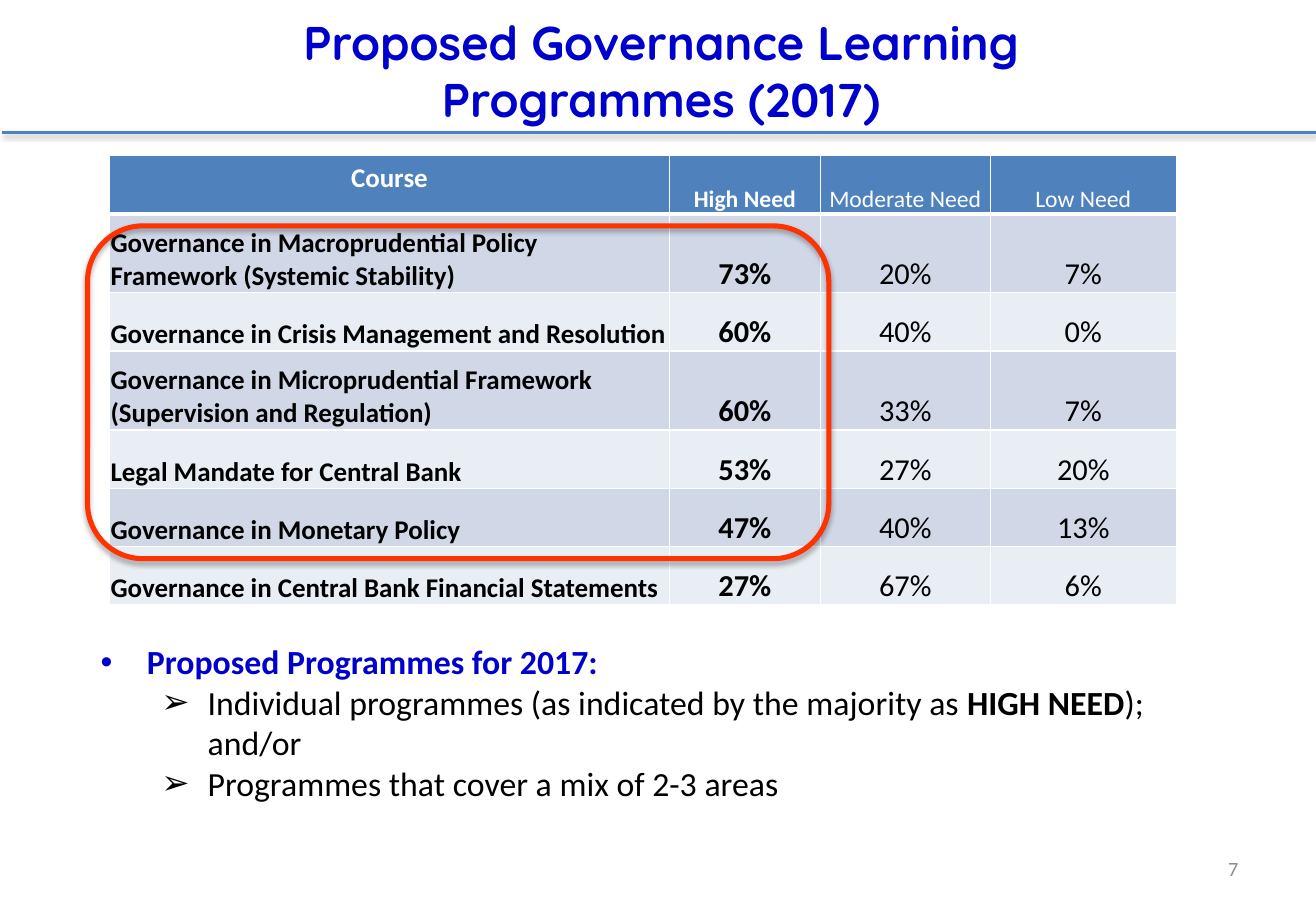
from lxml import etree
from pptx import Presentation, util as u
from pptx.dml.color import RGBColor
from pptx.enum import shapes, text
from pptx.oxml import ns

WIDTH, HEIGHT = u.Inches(10.83), u.Inches(7.5)
BLUE, STEEL, WHITE, BLACK = "0000CC", "4F81BD", "FFFFFF", "000000"
GREY, RED, BANDS = "8C8C8C", "FF3300", ("D0D8E8", "E9EDF4")
CENTER = text.PP_ALIGN.CENTER

COLUMNS = (42.57, 11.45, 12.93, 14.13)
SHORT_ROW, TALL_ROW = 6.4, 8.67
HEADINGS = ("Course", "High Need", "Moderate Need", "Low Need")
COURSES = (
    ("Governance in Macroprudential Policy Framework (Systemic Stability)", "73%", "20%", "7%"),
    ("Governance in Crisis Management and Resolution", "60%", "40%", "0%"),
    ("Governance in Microprudential Framework\n(Supervision and Regulation)", "60%", "33%", "7%"),
    ("Legal Mandate for Central Bank", "53%", "27%", "20%"),
    ("Governance in Monetary Policy", "47%", "40%", "13%"),
    ("Governance in Central Bank Financial Statements", "27%", "67%", "6%"),
)
TALL_COURSES = (0, 2)
BULLETS = (
    ("•", 0.38, BLUE, (("Proposed Programmes for 2017:", True),)),
    ("➢", 0.88, BLACK, (
        ("Individual programmes (as indicated by the majority as ", False),
        ("HIGH NEED", True),
        ("); and/or", False))),
    ("➢", 0.88, BLACK, (("Programmes that cover a mix of 2-3 areas", False),)),
)


def across(percent):
    """Turn a percentage of the slide width into a length."""
    return round(WIDTH * percent / 100)


def down(percent):
    """Turn a percentage of the slide height into a length."""
    return round(HEIGHT * percent / 100)


def place(left, top, width, height):
    """Turn four percentages into a box on the slide."""
    return across(left), down(top), across(width), down(height)


def color(value):
    """Make a colour from a hex string."""
    return RGBColor.from_string(value)


def add_element(parent, tag, **attributes):
    """Append a drawing element with its attributes."""
    names = {key: str(value) for key, value in attributes.items()}
    return etree.SubElement(parent, ns.qn(tag), names)


def add_span(para, words, size=18, bold=False, fill=BLACK, font="Calibri"):
    """Append formatted words to a paragraph."""
    span = para.add_run()
    span.text = words
    span.font.name, span.font.size, span.font.bold = font, u.Pt(size), bold
    span.font.color.rgb = color(fill)


def write(frame, words, align=None, **style):
    """Fill a text frame with one paragraph for each line of words."""
    for index, line in enumerate(words.split("\n")):
        para = frame.add_paragraph() if index else frame.paragraphs[0]
        para.alignment = align
        add_span(para, line, **style)


def outline(shape, fill, width, opacity, distance):
    """Give a shape a coloured line and a soft shadow below it."""
    shape.line.color.rgb = color(fill)
    shape.line.width = u.Pt(width)
    effects = add_element(shape._element.spPr, "a:effectLst")
    shadow = add_element(effects, "a:outerShdw", blurRad=u.Pt(3.1), dist=u.Pt(distance),
                         dir=5400000, rotWithShape=0)
    shade = add_element(shadow, "a:srgbClr", val=BLACK)
    add_element(shade, "a:alpha", val=opacity * 1000)


def add_heading(page, box):
    """Set the title and the rule below it."""
    title = page.shapes.title
    title.left, title.top, title.width, title.height = box
    frame = title.text_frame
    frame.word_wrap, frame.auto_size = True, text.MSO_AUTO_SIZE.NONE
    frame.vertical_anchor = text.MSO_ANCHOR.MIDDLE
    write(frame, "Proposed Governance Learning Programmes (2017)", CENTER,
          size=28, bold=True, fill=BLUE, font="Quicksand")
    level = down(14.53)
    rule = page.shapes.add_connector(shapes.MSO_CONNECTOR.STRAIGHT, across(0.18), level, WIDTH, level)
    outline(rule, STEEL, 2, 38, 1.6)


def format_cell(cell, fill, top=1, bottom=1):
    """Set the borders and fill of a table cell."""
    properties = cell._tc.get_or_add_tcPr()
    for tag, width in (("a:lnL", 1), ("a:lnR", 1), ("a:lnT", top), ("a:lnB", bottom)):
        border = add_element(properties, tag, w=u.Pt(width))
        add_element(add_element(border, "a:solidFill"), "a:srgbClr", val=WHITE)
    cell.fill.solid()
    cell.fill.fore_color.rgb = color(fill)


def tighten(cell):
    """Anchor cell text at the bottom with narrow margins."""
    cell.vertical_anchor = text.MSO_ANCHOR.BOTTOM
    cell.margin_left = cell.margin_right = cell.margin_top = u.Inches(0.01)
    cell.margin_bottom = 0


def add_needs(page, box):
    """Build the table of courses and needs."""
    table = page.shapes.add_table(len(COURSES) + 1, len(COLUMNS), *box).table
    for column, share in zip(table.columns, COLUMNS):
        column.width = across(share)
    for row in table.rows:
        row.height = down(SHORT_ROW)
    for index in TALL_COURSES:
        table.rows[index + 1].height = down(TALL_ROW)
    for index, words in enumerate(HEADINGS):
        cell = table.cell(0, index)
        format_cell(cell, STEEL, bottom=3)
        if index:
            tighten(cell)
        write(cell.text_frame, words, CENTER, size=14 if index else 16, bold=index < 2, fill=WHITE)
    for line, course in enumerate(COURSES):
        for index, words in enumerate(course):
            cell = table.cell(line + 1, index)
            format_cell(cell, BANDS[line % 2], top=1 if line else 3)
            tighten(cell)
            write(cell.text_frame, words, CENTER if index else text.PP_ALIGN.LEFT,
                  size=18 if index else 16, bold=index < 2)


def add_highlight(page, box):
    """Frame the courses in highest need."""
    frame = page.shapes.add_shape(shapes.MSO_SHAPE.ROUNDED_RECTANGLE, *box)
    frame.fill.background()
    outline(frame, RED, 3, 35, 1.8)


def add_proposals(page, box):
    """Write the bulleted proposals."""
    frame = page.shapes.add_textbox(*box).text_frame
    frame.word_wrap = True
    for index, (mark, indent, fill, spans) in enumerate(BULLETS):
        para = frame.add_paragraph() if index else frame.paragraphs[0]
        para.level = min(index, 1)
        properties = para._p.get_or_add_pPr()
        properties.set("marL", str(u.Inches(indent)))
        properties.set("indent", str(u.Inches(-0.38)))
        add_element(properties, "a:buFont", typeface="Arial")
        add_element(properties, "a:buChar", char=mark)
        for words, bold in spans:
            add_span(para, words, size=20, bold=bold, fill=fill)


def add_number(page, box):
    """Write the page number."""
    frame = page.shapes.add_textbox(*box).text_frame
    frame.word_wrap = True
    frame.vertical_anchor = text.MSO_ANCHOR.MIDDLE
    write(frame, "7", text.PP_ALIGN.RIGHT, size=12, fill=GREY)


def main():
    """Build and save the deck."""
    deck = Presentation()
    deck.slide_width, deck.slide_height = WIDTH, HEIGHT
    page = deck.slides.add_slide(deck.slide_layouts[5])
    add_heading(page, place(13.11, 0.53, 74.24, 14.4))
    add_number(page, place(71.65, 92.67, 23.36, 5.33))
    add_needs(page, place(8.31, 17.07, 81.08, 49.34))
    add_highlight(page, place(6.65, 24.8, 56.33, 36.53))
    add_proposals(page, place(6.74, 69.73, 88.37, 19.33))
    deck.save("out.pptx")


if __name__ == "__main__":
    main()
